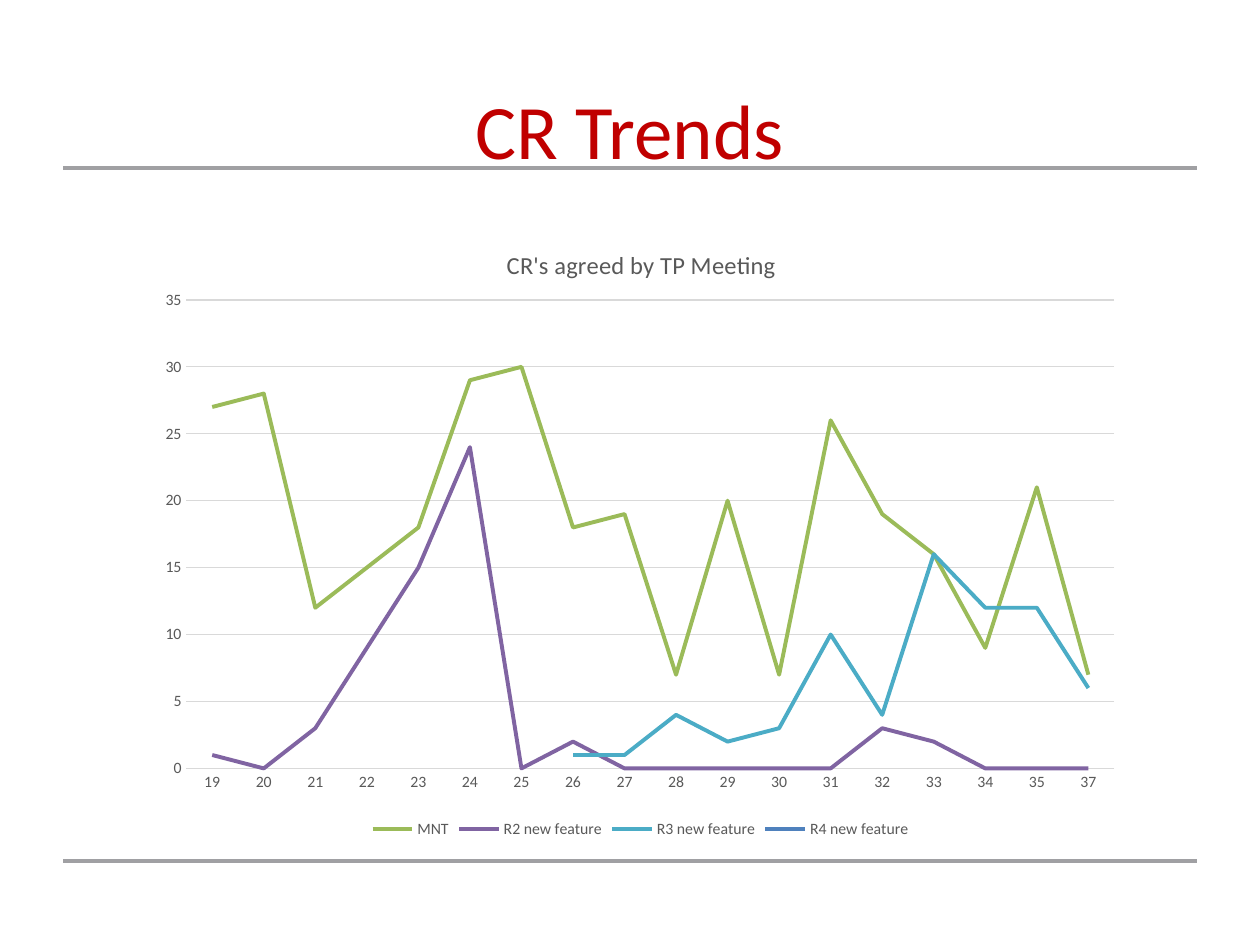
from lxml import etree
from pptx import Presentation, util as u
from pptx.chart.data import CategoryChartData
from pptx.dml.color import RGBColor
from pptx.enum import chart as ch, shapes, text
from pptx.oxml.ns import qn

RED = RGBColor(0xC0, 0x00, 0x00)
RULE_GREY = RGBColor(0xA0, 0xA0, 0xA3)
GRID_GREY = RGBColor(0xD9, 0xD9, 0xD9)
LABEL_GREY = RGBColor(0x59, 0x59, 0x59)
GREEN = RGBColor(0x9B, 0xBB, 0x59)
PURPLE = RGBColor(0x80, 0x64, 0xA2)
TEAL = RGBColor(0x4B, 0xAC, 0xC6)
BLUE = RGBColor(0x4F, 0x81, 0xBD)

MEETINGS = [str(n) for n in range(19, 38) if n != 36]
TRENDS = [
    ("MNT", GREEN, [27, 28, 12, 15, 18, 29, 30, 18, 19, 7, 20, 7, 26, 19, 16, 9, 21, 7]),
    ("R2 new feature", PURPLE, [1, 0, 3, 9, 15, 24, 0, 2, 0, 0, 0, 0, 0, 3, 2, 0, 0, 0]),
    ("R3 new feature", TEAL, [None] * 7 + [1, 1, 4, 2, 3, 10, 4, 16, 12, 12, 6]),
    ("R4 new feature", BLUE, [None] * 17 + [1]),
]


def set_layout(parent, index, **fractions):
    """Place a chart part by fractions of the chart area."""
    for old in parent.findall(qn("c:layout")):
        parent.remove(old)
    layout = etree.Element(qn("c:layout"))
    parent.insert(index, layout)
    manual = etree.SubElement(layout, qn("c:manualLayout"))
    if "w" in fractions:
        etree.SubElement(manual, qn("c:layoutTarget")).set("val", "inner")
    for side in ("xMode", "yMode"):
        etree.SubElement(manual, qn(f"c:{side}")).set("val", "edge")
    for name, value in fractions.items():
        etree.SubElement(manual, qn(f"c:{name}")).set("val", str(value))


class TrendSlide:
    font_name = "Calibri"

    def __init__(self, prs):
        self.slide = prs.slides.add_slide(prs.slide_layouts[5])

    def style(self, font, size, color):
        font.name, font.size, font.bold = self.font_name, u.Pt(size), False
        font.color.rgb = color

    def stroke(self, line, color, width):
        line.color.rgb = color
        line.width = u.Pt(width)

    def title(self, words, left, top, width, height):
        heading = self.slide.shapes.title
        heading.left, heading.top = u.Pt(left), u.Pt(top)
        heading.width, heading.height = u.Pt(width), u.Pt(height)
        frame = heading.text_frame
        frame.text = words
        frame.vertical_anchor = text.MSO_ANCHOR.TOP
        frame.margin_top = u.Pt(5)
        frame.paragraphs[0].alignment = text.PP_ALIGN.CENTER
        self.style(frame.paragraphs[0].font, 44, RED)

    def rule(self, left, right, y):
        rule = self.slide.shapes.add_connector(
            shapes.MSO_CONNECTOR.STRAIGHT, u.Pt(left), u.Pt(y), u.Pt(right), u.Pt(y))
        self.stroke(rule.line, RULE_GREY, 1.75)
        etree.SubElement(rule.line._get_or_add_ln().getparent(), qn("a:effectLst"))

    def line_chart(self, caption, categories, trends, left, top, width, height):
        data = CategoryChartData()
        data.categories = categories
        for name, _, values in trends:
            data.add_series(name, values)
        chart = self.slide.shapes.add_chart(
            ch.XL_CHART_TYPE.LINE, u.Pt(left), u.Pt(top), u.Pt(width), u.Pt(height), data).chart
        self.style(chart.font, 10, LABEL_GREY)

        # Caption
        chart.has_title = True
        frame = chart.chart_title.text_frame
        frame.text = caption
        self.style(frame.paragraphs[0].font, 14, LABEL_GREY)
        chart.chart_title.include_in_layout = False
        set_layout(chart.chart_title._element, 1, x=0.36, y=0.04)

        # Legend
        chart.has_legend = True
        chart.legend.position = ch.XL_LEGEND_POSITION.BOTTOM
        chart.legend.include_in_layout = False
        self.style(chart.legend.font, 9, LABEL_GREY)

        # Axes
        for axis in (chart.category_axis, chart.value_axis):
            axis.major_tick_mark = axis.minor_tick_mark = ch.XL_TICK_MARK.NONE
            self.style(axis.tick_labels.font, 9, LABEL_GREY)
        self.stroke(chart.category_axis.format.line, GRID_GREY, 0.75)
        scale = chart.value_axis
        scale.minimum_scale, scale.maximum_scale, scale.major_unit = 0, 35, 5
        scale.format.line.fill.background()
        scale.has_major_gridlines = True
        self.stroke(scale.major_gridlines.format.line, GRID_GREY, 0.75)

        # Lines
        plot = chart.plots[0]
        plot.vary_by_categories = False
        for series, (_, color, _) in zip(plot.series, trends):
            series.smooth = False
            series.marker.style = ch.XL_MARKER_STYLE.NONE
            self.stroke(series.format.line, color, 2.25)
        set_layout(chart._chartSpace.chart.plotArea, 0, x=0.04, y=0.13, w=0.94, h=0.75)


def main():
    prs = Presentation()
    prs.slide_width, prs.slide_height = u.Pt(720), u.Pt(540)
    page = TrendSlide(prs)
    for y in (96, 492):
        page.rule(36, 684, y)
    page.title("CR Trends", 36, 42, 648, 90)
    page.line_chart("CR's agreed by TP Meeting", MEETINGS, TRENDS, 84, 125, 564, 357)
    prs.save("out.pptx")


if __name__ == "__main__":
    main()
